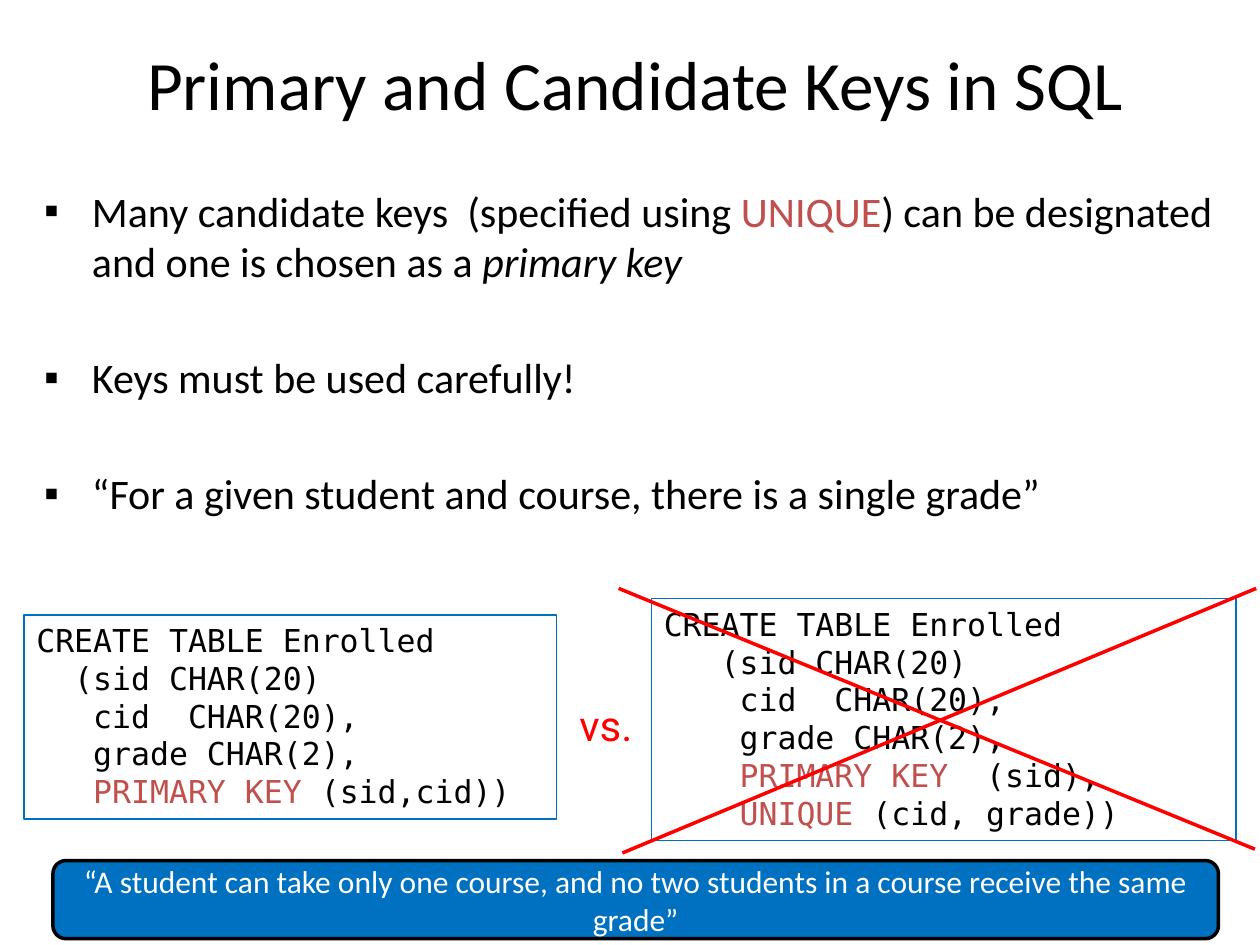
import dataclasses
import typing

import lxml.etree
import pptx
import pptx.dml.color
import pptx.enum.shapes
import pptx.enum.text
import pptx.oxml.ns
import pptx.util

Inches, Pt = pptx.util.Inches, pptx.util.Pt
Align, Anchor = pptx.enum.text.PP_ALIGN, pptx.enum.text.MSO_ANCHOR
Kind = pptx.enum.shapes.MSO_SHAPE
qn = pptx.oxml.ns.qn

WIDE, HIGH = 10, 7.5
COLS, ROWS = 40, 30


@dataclasses.dataclass(frozen=True)
class Theme:
    ink: str = "000000"
    paper: str = "FFFFFF"
    blue: str = "0070C0"
    red: str = "FF0000"
    key: str = "C0504D"
    sans: str = "Calibri"
    mono: str = "DejaVu Sans Mono"
    label: str = "Roboto"
    head: float = 39.6
    body: float = 24
    small: float = 18
    thin: float = 0.75
    thick: float = 2


class Run(typing.NamedTuple):
    text: str
    color: str = ""
    slant: bool = False


class Box(typing.NamedTuple):
    """Left, top, width and height in grid columns and rows."""
    col: float
    row: float
    cols: float
    rows: float


class Code(typing.NamedTuple):
    box: Box
    lines: list


class Stroke(typing.NamedTuple):
    start: tuple
    end: tuple


T = Theme()

# Content
POINTS = [
    [Run("Many candidate keys  (specified using "), Run("UNIQUE", T.key),
     Run(") can be designated and one is chosen as a "),
     Run("primary key", slant=True)],
    [Run("Keys must be used carefully!")],
    [Run("“For a given student and course, there is a single grade”")],
]
CODES = [
    Code(Box(0.76, 19.52, 16.92, 6.48), [
        [Run("CREATE TABLE Enrolled")],
        [Run("  (sid CHAR(20)")],
        [Run("   cid  CHAR(20),")],
        [Run("   grade CHAR(2),")],
        [Run("   "), Run("PRIMARY KEY ", T.key), Run("(sid,cid))")],
    ]),
    Code(Box(20.68, 19, 18.56, 7.68), [
        [Run("CREATE TABLE Enrolled")],
        [Run("   (sid CHAR(20)")],
        [Run("    cid  CHAR(20),")],
        [Run("    grade CHAR(2),")],
        [Run("    "), Run("PRIMARY KEY  ", T.key), Run("(sid),")],
        [Run("    "), Run("UNIQUE", T.key), Run(" (cid, grade))")],
    ]),
]
CROSS = [Stroke((19.64, 18.68), (39.84, 26.96)),
         Stroke((39.88, 18.68), (19.76, 27.08))]


def rgb(code: str) -> pptx.dml.color.RGBColor:
    return pptx.dml.color.RGBColor.from_string(code)


def across(cols: float) -> int:
    return Inches(cols * WIDE / COLS)


def down(rows: float) -> int:
    return Inches(rows * HIGH / ROWS)


def spot(box: Box) -> tuple:
    return across(box.col), down(box.row), across(box.cols), down(box.rows)


def place(shape, box: Box) -> None:
    shape.left, shape.top, shape.width, shape.height = spot(box)


def bullet(para, mark: str, indent: float) -> None:
    props = para._p.get_or_add_pPr()
    props.set("marL", str(Inches(indent)))
    props.set("indent", str(-Inches(indent)))
    tint = lxml.etree.SubElement(props, qn("a:buClr"))
    lxml.etree.SubElement(tint, qn("a:srgbClr")).set("val", T.ink)
    lxml.etree.SubElement(props, qn("a:buFont")).set("typeface", "Arial")
    lxml.etree.SubElement(props, qn("a:buChar")).set("char", mark)


def write(shape, paras: list, *, size: float, font: str = T.sans,
          color: str = T.ink, align=Align.LEFT, anchor=Anchor.TOP,
          gap: float = 0, mark: str = "", wrap: bool = True) -> None:
    frame = shape.text_frame
    frame.word_wrap = wrap
    frame.auto_size = pptx.enum.text.MSO_AUTO_SIZE.NONE
    frame.vertical_anchor = anchor
    for i, runs in enumerate(paras):
        para = frame.add_paragraph() if i else frame.paragraphs[0]
        if mark:
            bullet(para, mark, 0.38)
        para.alignment = align
        para.space_before = Pt(gap if i else 0)
        for run in runs:
            part = para.add_run()
            part.text = run.text
            part.font.name, part.font.size = font, Pt(size)
            part.font.italic = run.slant
            part.font.color.rgb = rgb(run.color or color)


def panel(slide, box: Box, *, kind=Kind.RECTANGLE, fill: str = "",
          edge: str = T.blue, weight: float = T.thin):
    shape = slide.shapes.add_shape(kind, *spot(box))
    shape.shadow.inherit = False
    if fill:
        shape.fill.solid()
        shape.fill.fore_color.rgb = rgb(fill)
    else:
        shape.fill.background()
    shape.line.color.rgb = rgb(edge)
    shape.line.width = Pt(weight)
    return shape


def strike(slide, stroke: Stroke) -> None:
    (x1, y1), (x2, y2) = stroke
    line = slide.shapes.add_connector(
        pptx.enum.shapes.MSO_CONNECTOR.STRAIGHT,
        across(x1), down(y1), across(x2), down(y2))
    line.line.color.rgb = rgb(T.red)
    line.line.width = Pt(T.thick)
    lxml.etree.SubElement(line._element.spPr, qn("a:effectLst"))


def main() -> None:
    deck = pptx.Presentation()
    deck.slide_width, deck.slide_height = Inches(WIDE), Inches(HIGH)
    slide = deck.slides.add_slide(deck.slide_layouts[1])

    # Title and list
    title, body = slide.placeholders
    place(title, Box(3.16, 0.12, 34, 5))
    write(title, [[Run("Primary and Candidate Keys in SQL")]], size=T.head,
          align=Align.CENTER, anchor=Anchor.MIDDLE)
    place(body, Box(1, 5.68, 38.32, 19.32))
    write(body, POINTS, size=T.body, gap=37.5, mark="▪")

    # Two table definitions, side by side
    for code in CODES:
        write(panel(slide, code.box), code.lines, size=T.small, font=T.mono)
    versus = slide.shapes.add_textbox(*spot(Box(18, 22, 3, 2.04)))
    write(versus, [[Run("vs.")]], size=T.body, font=T.label, color=T.red,
          wrap=False)

    # Cross over the wrong definition
    for stroke in CROSS:
        strike(slide, stroke)

    # Banner with the meaning of the wrong definition
    banner = panel(slide, Box(1.68, 27.32, 37, 2.48),
                   kind=Kind.ROUNDED_RECTANGLE, fill=T.blue, edge=T.ink,
                   weight=T.thick)
    write(banner, [[Run("“A student can take only one course, and no two "
                        "students in a course receive the same grade”")]],
          size=T.small, color=T.paper, align=Align.CENTER,
          anchor=Anchor.MIDDLE)

    deck.save("out.pptx")


if __name__ == "__main__":
    main()
